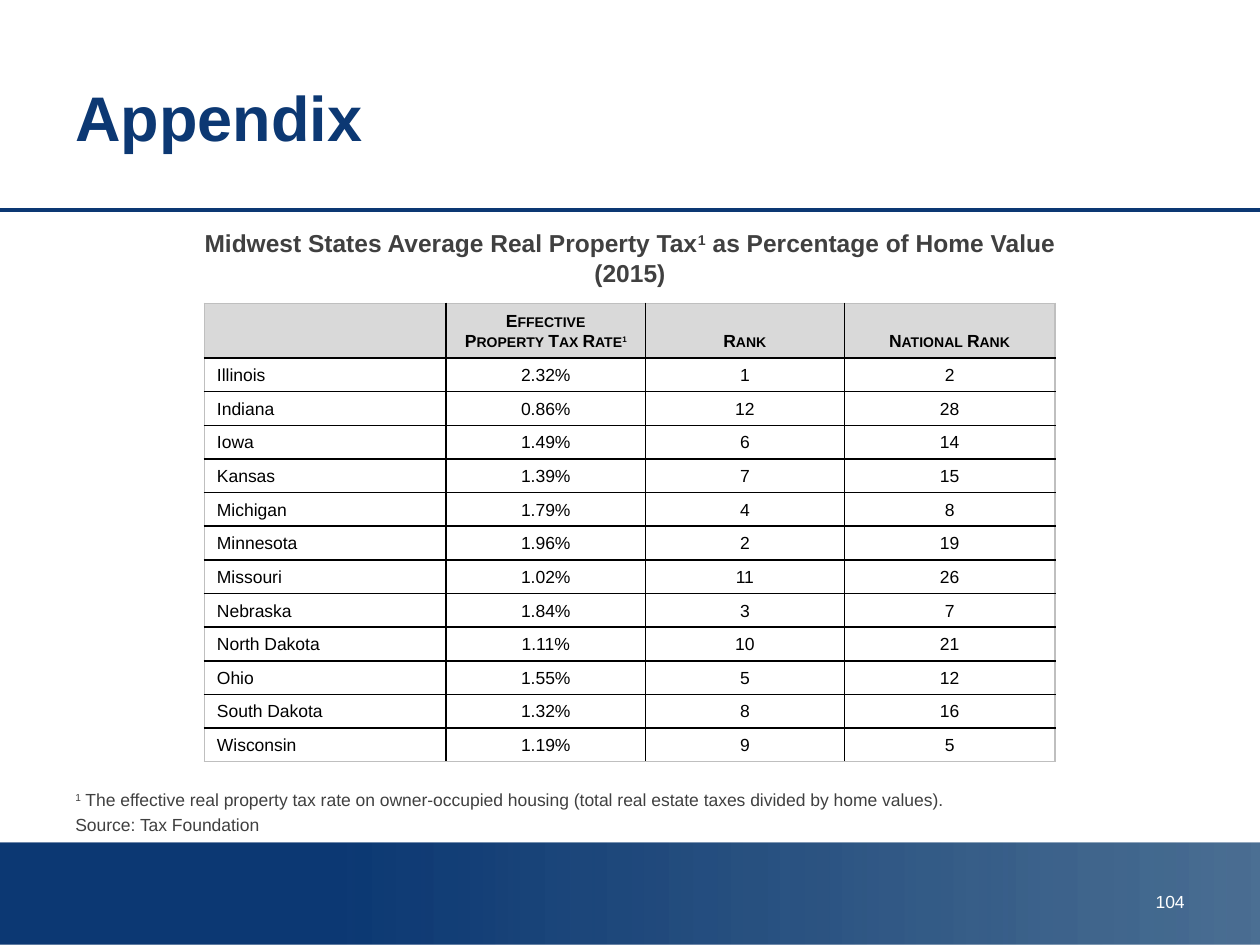
from lxml.etree import SubElement
from pptx import Presentation
from pptx.dml.color import RGBColor
from pptx.enum.shapes import MSO_CONNECTOR, MSO_SHAPE
from pptx.enum.text import MSO_ANCHOR, PP_ALIGN
from pptx.oxml.ns import qn
from pptx.util import Pt

COLORS = {"navy": "0C3873", "fade": "003366", "gray": "404040", "black": "000000",
          "white": "FFFFFF", "head": "D9D9D9", "edge": "BFBFBF"}
WIDTH, HEIGHT = 720, 540
HEADS = ["", "Effective\nProperty Tax Rate^1", "Rank", "National Rank"]
STATES = [
    ("Illinois", "2.32%", 1, 2),
    ("Indiana", "0.86%", 12, 28),
    ("Iowa", "1.49%", 6, 14),
    ("Kansas", "1.39%", 7, 15),
    ("Michigan", "1.79%", 4, 8),
    ("Minnesota", "1.96%", 2, 19),
    ("Missouri", "1.02%", 11, 26),
    ("Nebraska", "1.84%", 3, 7),
    ("North Dakota", "1.11%", 10, 21),
    ("Ohio", "1.55%", 5, 12),
    ("South Dakota", "1.32%", 8, 16),
    ("Wisconsin", "1.19%", 9, 5),
]


def rgb(name):
    return RGBColor.from_string(COLORS[name])


class Deck:
    def __init__(self, slide, font="Arial"):
        self.slide = slide
        self.font = font

    def words(self, para, text, size, color, bold=False, align=PP_ALIGN.LEFT, small=False):
        """Fill a paragraph; parts between ^ marks alternate normal and raised."""
        para.alignment = align
        para.font.size = Pt(size)
        for i, part in enumerate(text.split("^")):
            for j, line in enumerate(part.split("\n")):
                if j:
                    para.add_line_break()
                if not line:
                    continue
                run = para.add_run()
                run.text = line
                run.font.name, run.font.size, run.font.bold = self.font, Pt(size), bold
                run.font.color.rgb = rgb(color)
                props = run.font._element
                if small:
                    props.set("cap", "small")
                if i % 2:
                    props.set("baseline", "30000")

    def text(self, box, lines, size, color, bold=False, align=PP_ALIGN.LEFT,
             anchor=MSO_ANCHOR.TOP, gap=0):
        frame = self.slide.shapes.add_textbox(*map(Pt, box)).text_frame
        frame.word_wrap = True
        frame.vertical_anchor = anchor
        for i, line in enumerate(lines):
            para = frame.add_paragraph() if i else frame.paragraphs[0]
            if i:
                para.space_before = Pt(gap)
            self.words(para, line, size, color, bold, align)

    def band(self, box, start, end, alpha):
        """Draw a bar that fades sideways to a see-through colour."""
        bar = self.slide.shapes.add_shape(MSO_SHAPE.RECTANGLE, *map(Pt, box))
        bar.shadow.inherit = False
        bar.line.fill.background()
        bar.fill.gradient()
        bar.fill.gradient_angle = 0
        first, last = bar.fill.gradient_stops
        first.position, last.position = 0.25, 1
        first.color.rgb, last.color.rgb = rgb(start), rgb(end)
        SubElement(last._gs[0], qn("a:alpha"), val=str(alpha * 1000))

    def rule(self, y, color, width):
        line = self.slide.shapes.add_connector(
            MSO_CONNECTOR.STRAIGHT, 0, Pt(y), Pt(WIDTH), Pt(y))
        line.line.color.rgb = rgb(color)
        line.line.width = Pt(width)
        SubElement(line._element.spPr, qn("a:effectLst"))

    def border(self, cell, side, color):
        line = SubElement(cell._tc.get_or_add_tcPr(), qn("a:ln" + side), w=str(Pt(1)))
        fill = SubElement(line, qn("a:solidFill"))
        SubElement(fill, qn("a:srgbClr"), val=COLORS[color])

    def table(self, left, top, rows, widths, heights):
        size = sum(widths), sum(heights)
        grid = self.slide.shapes.add_table(
            len(rows), len(widths), Pt(left), Pt(top), *map(Pt, size)).table
        grid.first_row = grid.horz_banding = False
        for col, width in zip(grid.columns, widths):
            col.width = Pt(width)
        for row, height in zip(grid.rows, heights):
            row.height = Pt(height)
        for r, row in enumerate(rows):
            for c, value in enumerate(row):
                cell = grid.cell(r, c)
                outer = {"L": c == 0, "R": c == len(widths) - 1,
                         "T": r == 0, "B": r == len(rows) - 1}
                for side, edge in outer.items():
                    self.border(cell, side, "edge" if edge else "black")
                if r:
                    cell.fill.background()
                else:
                    cell.fill.solid()
                    cell.fill.fore_color.rgb = rgb("head")
                cell.vertical_anchor = MSO_ANCHOR.BOTTOM
                para = cell.text_frame.paragraphs[0]
                para.line_spacing = Pt(12)
                align = PP_ALIGN.CENTER if c else PP_ALIGN.LEFT
                self.words(para, str(value), 10, "black", r == 0, align, r == 0)


def main():
    show = Presentation()
    show.slide_width, show.slide_height = Pt(WIDTH), Pt(HEIGHT)
    deck = Deck(show.slides.add_slide(show.slide_layouts[6]))

    deck.band((0, 481.5, 721.5, 58.5), "navy", "fade", 70)
    deck.rule(120, "navy", 2)
    deck.text((36, 21.6, 648, 90), ["Appendix"], 36, "navy", True, anchor=MSO_ANCHOR.MIDDLE)
    deck.text((516, 505.5, 168, 28.8), ["104"], 10, "white", align=PP_ALIGN.RIGHT)
    deck.text((36, 127, 648, 40),
              ["Midwest States Average Real Property Tax^1^ as Percentage of Home Value\n(2015)"],
              14, "gray", True, PP_ALIGN.CENTER)
    deck.table(116.8, 173.4, [HEADS, *STATES], [138.2, 113.8, 113.8, 120.2],
               [31.2] + [19.2] * len(STATES))
    deck.text((36, 447.5, 648, 34),
              ["^1^ The effective real property tax rate on owner-occupied housing "
               "(total real estate taxes divided by home values).",
               "Source: Tax Foundation"], 10, "gray", gap=2)
    show.save("out.pptx")


if __name__ == "__main__":
    main()
